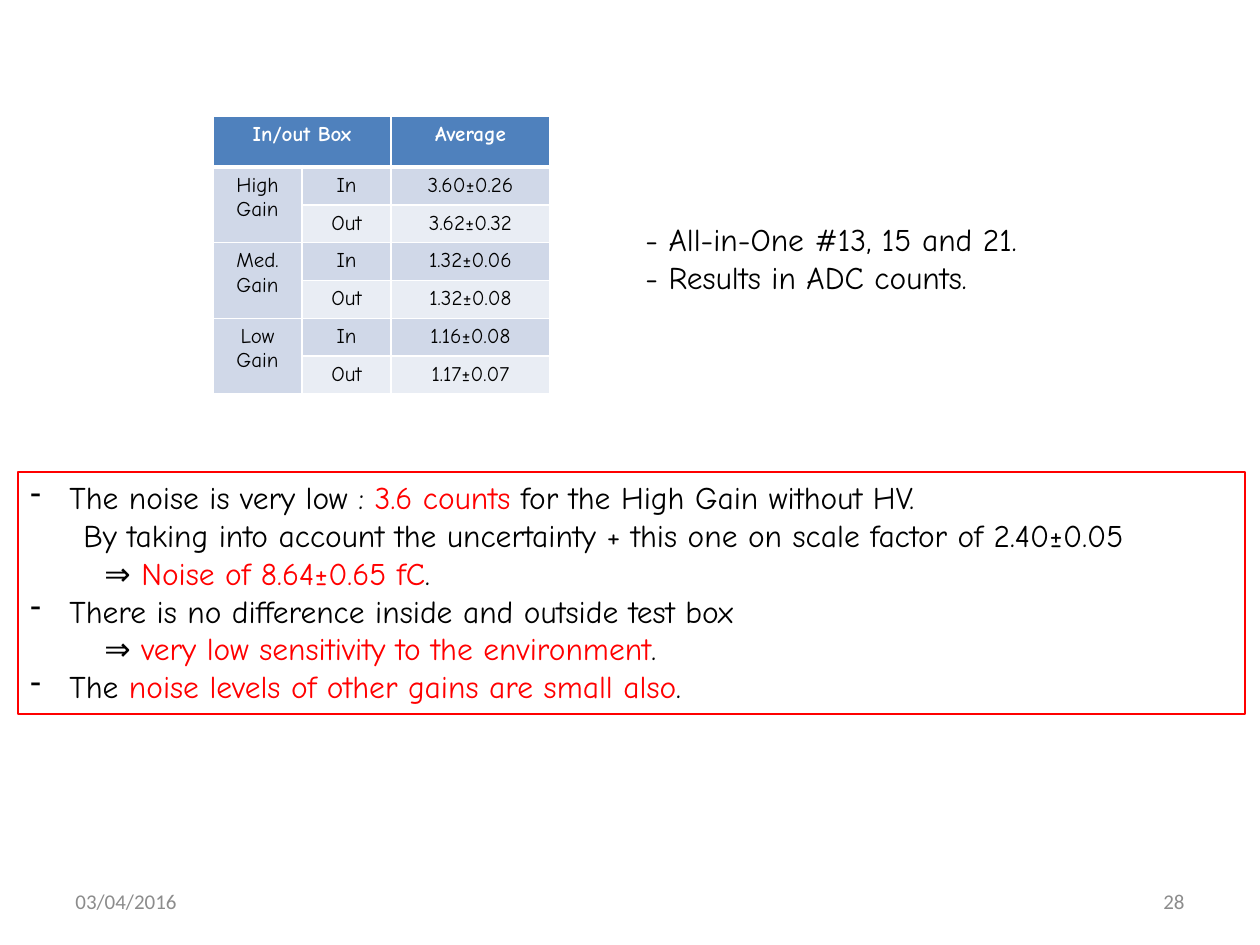
"""Build the slide on noise levels inside and outside the test box."""
from lxml import etree
from pptx import Presentation
from pptx.dml.color import RGBColor
from pptx.enum.shapes import MSO_SHAPE
from pptx.enum.text import MSO_ANCHOR, PP_ALIGN
from pptx.oxml.ns import qn
from pptx.util import Pt

PX = 914400 // 126
LEFT, CENTER, RIGHT = PP_ALIGN.LEFT, PP_ALIGN.CENTER, PP_ALIGN.RIGHT
TOP, MIDDLE = MSO_ANCHOR.TOP, MSO_ANCHOR.MIDDLE
RECTANGLE = MSO_SHAPE.RECTANGLE
BODY_FONT, FOOTER_FONT = "Comic Neue", "Calibri"
BLACK, WHITE, RED, GRAY = "000000", "FFFFFF", "FF0000", "8C8C8C"
HEADER_FILL, DARK_BAND, LIGHT_BAND = "4F81BD", "D0D8E8", "E9EDF4"


def color(value):
    """Turn a hex string into a colour."""
    return RGBColor.from_string(value)


def write(frame, lines, size, ink=BLACK, align=LEFT, name=BODY_FONT, bold=False):
    """Write one paragraph per line in a single style."""
    frame.text = "\n".join(lines)
    for paragraph in frame.paragraphs:
        paragraph.alignment = align
        font = paragraph.font
        font.name, font.size, font.bold = name, Pt(size), bold
        font.color.rgb = color(ink)


presentation = Presentation()
presentation.slide_width, presentation.slide_height = 1260 * PX, 945 * PX
slide = presentation.slides.add_slide(presentation.slide_layouts[6])

text_boxes = [
    (63, 876, 294, 50, MIDDLE, ["03/04/2016"], 12, GRAY, LEFT, FOOTER_FONT),
    (903, 876, 294, 50, MIDDLE, ["28"], 12, GRAY, RIGHT, FOOTER_FONT),
    (633, 214, 476, 89, TOP,
     ["- All-in-One #13, 15 and 21.", "- Results in ADC counts."],
     18, BLACK, LEFT, BODY_FONT),
]
for left, top, width, height, anchor, lines, *style in text_boxes:
    box = slide.shapes.add_textbox(left * PX, top * PX, width * PX, height * PX)
    box.text_frame.word_wrap = True
    box.text_frame.vertical_anchor = anchor
    write(box.text_frame, lines, *style)

rows = [
    ["In/out Box", "", "Average"],
    ["High\nGain", "In", "3.60±0.26"],
    ["", "Out", "3.62±0.32"],
    ["Med.\nGain", "In", "1.32±0.06"],
    ["", "Out", "1.32±0.08"],
    ["Low\nGain", "In", "1.16±0.08"],
    ["", "Out", "1.17±0.07"],
]
column_widths = [89, 89, 159]
row_heights = [51] + [36] * 6
table = slide.shapes.add_table(
    len(rows), len(column_widths), 213 * PX, 116 * PX,
    sum(column_widths) * PX, sum(row_heights) * PX).table
for column, width in zip(table.columns, column_widths):
    column.width = width * PX
for row, height in zip(table.rows, row_heights):
    row.height = height * PX
for row_index, values in enumerate(rows):
    is_header = row_index == 0
    band = DARK_BAND if row_index % 2 else LIGHT_BAND
    for column_index, value in enumerate(values):
        cell = table.cell(row_index, column_index)
        properties = cell._tc.get_or_add_tcPr()
        for side in ("lnL", "lnR", "lnT", "lnB"):
            thick = (is_header and side == "lnB") or (row_index == 1 and side == "lnT")
            border = etree.SubElement(
                properties, qn(f"a:{side}"), w=str(Pt(3 if thick else 1)))
            fill = etree.SubElement(border, qn("a:solidFill"))
            etree.SubElement(fill, qn("a:srgbClr"), val=WHITE)
        cell.fill.solid()
        cell.fill.fore_color.rgb = color(HEADER_FILL if is_header else band)
        write(cell.text_frame, value.split("\n"), 12,
              WHITE if is_header else BLACK, CENTER, bold=is_header)
table.cell(0, 0).merge(table.cell(0, 1))
for row_index in (1, 3, 5):
    table.cell(row_index, 0).merge(table.cell(row_index + 1, 0))

conclusions = slide.shapes.add_shape(RECTANGLE, 18 * PX, 472 * PX, 1227 * PX, 242 * PX)
conclusions.shadow.inherit = False
conclusions.fill.background()
conclusions.line.color.rgb = color(RED)
conclusions.line.width = Pt(0.75)
frame = conclusions.text_frame
frame.word_wrap = True
frame.vertical_anchor = TOP

BULLET_INDENT, DETAIL_INDENT, RESULT_INDENT = 39, 53, 74
points = [
    (BULLET_INDENT, [("The noise is very low : ", BLACK), ("3.6 counts ", RED),
                     ("for the High Gain without HV.", BLACK)]),
    (DETAIL_INDENT, [("By taking into account the uncertainty + this one "
                      "on scale factor of 2.40±0.05", BLACK)]),
    (RESULT_INDENT, [("⇒ ", BLACK), ("Noise of 8.64±0.65 fC", RED), (".", BLACK)]),
    (BULLET_INDENT, [("There is no difference inside and outside test box", BLACK)]),
    (RESULT_INDENT, [("⇒ ", BLACK), ("very low sensitivity to the environment", RED),
                     (".", BLACK)]),
    (BULLET_INDENT, [("The", BLACK), (" noise levels of other gains are small also", RED),
                     (".", BLACK)]),
]
for index, (indent, runs) in enumerate(points):
    paragraph = frame.add_paragraph() if index else frame.paragraphs[0]
    paragraph.alignment = LEFT
    properties = paragraph._p.get_or_add_pPr()
    properties.set("marL", str(indent * PX))
    if indent == BULLET_INDENT:
        properties.set("indent", str(-indent * PX))
        etree.SubElement(properties, qn("a:buChar"), char="-")
    paragraph.font.name = BODY_FONT
    paragraph.font.size = Pt(18)
    for text, ink in runs:
        run = paragraph.add_run()
        run.text = text
        run.font.color.rgb = color(ink)

presentation.save("out.pptx")
